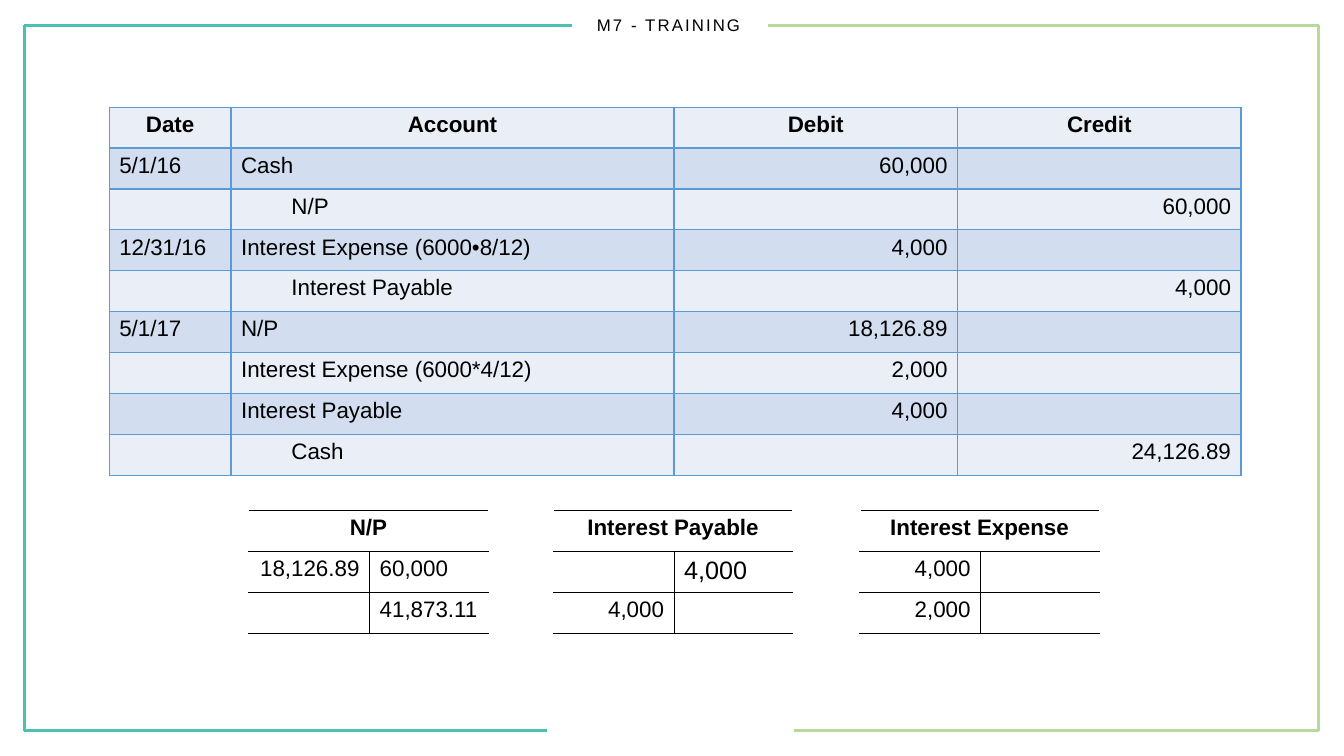
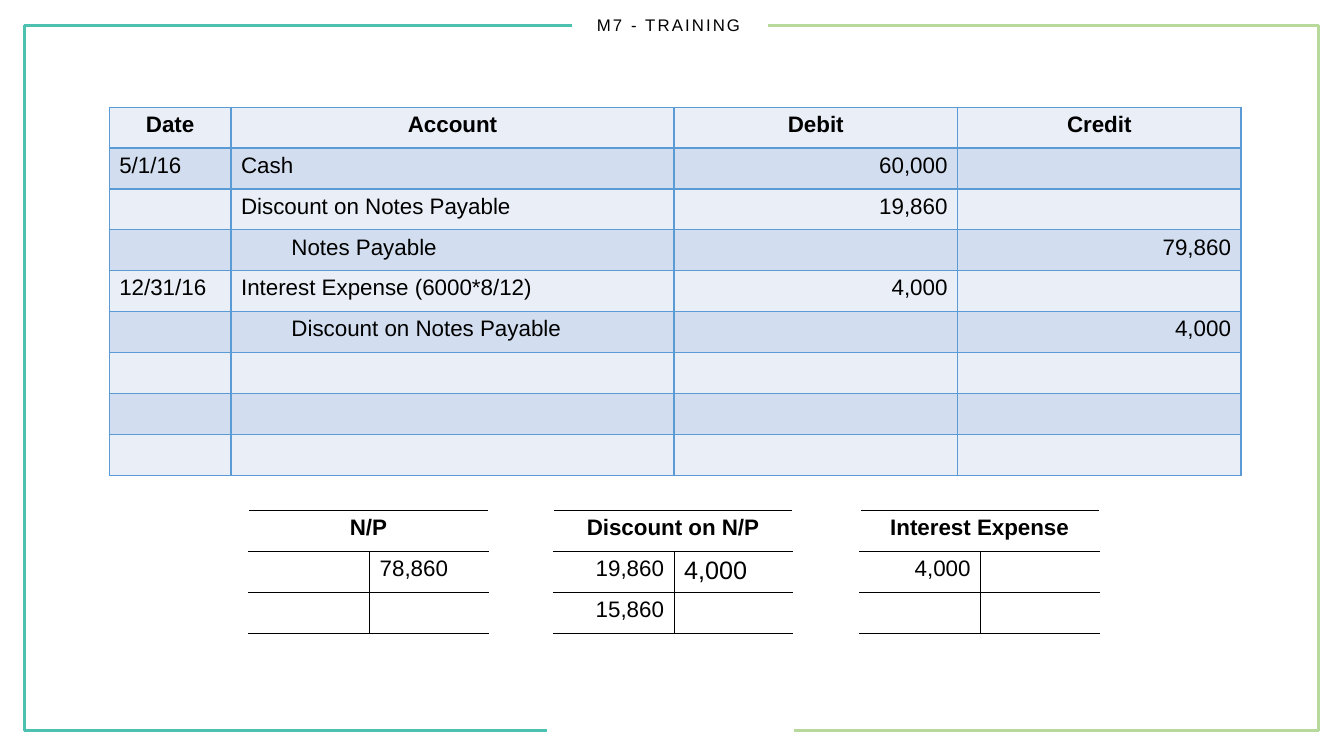
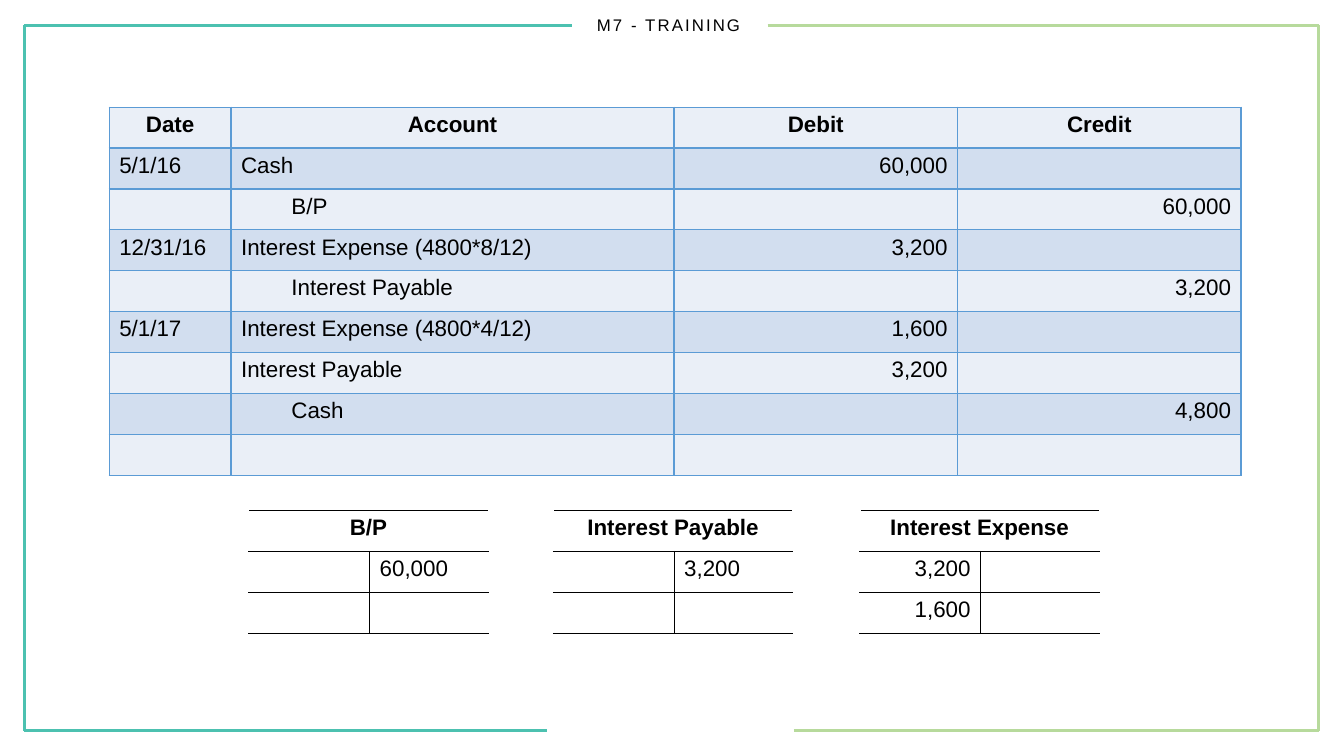
from lxml.etree import SubElement
from pptx import Presentation
from pptx.dml.color import RGBColor
from pptx.enum.shapes import MSO_CONNECTOR
from pptx.enum.text import MSO_ANCHOR, PP_ALIGN
from pptx.oxml.ns import qn
from pptx.util import Pt

PX = 9525  # 96 px to the inch
WIDTH, HEIGHT = 1280, 720
FONT = "Arial"
BLACK = "000000"
TEAL, GREEN = "4CC1B0", "B7DA9C"
BLUE = "5B9BD5"
BANDS = ["EAEFF7", "D2DEEF"]
LEFT, CENTER, RIGHT = PP_ALIGN.LEFT, PP_ALIGN.CENTER, PP_ALIGN.RIGHT

ROW_HEIGHT = 39
JOURNAL_COLUMNS = [116, 422, 270, 270]
JOURNAL_ROWS = 9
JOURNAL_HEADER = ("Date", "Account", "Debit", "Credit")
JOURNAL_ALIGNS = [LEFT, LEFT, RIGHT, RIGHT]
CREDIT_INDENT = 48
ACCOUNT_COLUMNS = [115, 113]
ACCOUNT_LEFTS = [237, 527, 819]

# Frame lines: x and y of both ends, colour
FRAME = [
    (23, 24, 23, 696, TEAL),
    (1256, 24, 1256, 696, GREEN),
    (23, 696, 521, 696, TEAL),
    (756, 696, 1256, 696, GREEN),
    (23, 24, 545, 24, TEAL),
    (731, 24, 1256, 24, GREEN),
]

# Each slide: journal rows, then T-accounts (title, size of credit figures, rows)
SLIDES = [
    (
        [
            ("5/1/16", "Cash", "60,000", ""),
            ("", "N/P", "", "60,000"),
            ("12/31/16", "Interest Expense (6000•8/12)", "4,000", ""),
            ("", "Interest Payable", "", "4,000"),
            ("5/1/17", "N/P", "18,126.89", ""),
            ("", "Interest Expense (6000*4/12)", "2,000", ""),
            ("", "Interest Payable", "4,000", ""),
            ("", "Cash", "", "24,126.89"),
        ],
        [
            ("N/P", 16, [("18,126.89", "60,000"), ("", "41,873.11")]),
            ("Interest Payable", 18, [("", "4,000"), ("4,000", "")]),
            ("Interest Expense", 16, [("4,000", ""), ("2,000", "")]),
        ],
    ),
    (
        [
            ("5/1/16", "Cash", "60,000", ""),
            ("", "Discount on Notes Payable", "19,860", ""),
            ("", "Notes Payable", "", "79,860"),
            ("12/31/16", "Interest Expense (6000*8/12)", "4,000", ""),
            ("", "Discount on Notes Payable", "", "4,000"),
        ],
        [
            ("N/P", 16, [("", "78,860"), ("", "")]),
            ("Discount on N/P", 18, [("19,860", "4,000"), ("15,860", "")]),
            ("Interest Expense", 16, [("4,000", ""), ("", "")]),
        ],
    ),
    (
        [
            ("5/1/16", "Cash", "60,000", ""),
            ("", "B/P", "", "60,000"),
            ("12/31/16", "Interest Expense (4800*8/12)", "3,200", ""),
            ("", "Interest Payable", "", "3,200"),
            ("5/1/17", "Interest Expense (4800*4/12)", "1,600", ""),
            ("", "Interest Payable", "3,200", ""),
            ("", "Cash", "", "4,800"),
        ],
        [
            ("B/P", 16, [("", "60,000"), ("", "")]),
            ("Interest Payable", 16, [("", "3,200"), ("", "")]),
            ("Interest Expense", 16, [("3,200", ""), ("1,600", "")]),
        ],
    ),
]


def color(value):
    return RGBColor.from_string(value)


def format_cell(cell, text, align, borders, line_color, fill=None, bold=False, size=16):
    """Draw borders, given as {side: points}, then the fill and the text."""
    properties = cell._tc.get_or_add_tcPr()
    for side in "LRTB":
        if side in borders:
            line = SubElement(properties, qn(f"a:ln{side}"), w=str(Pt(borders[side])))
            solid = SubElement(line, qn("a:solidFill"))
            SubElement(solid, qn("a:srgbClr"), val=line_color)
    if fill:
        cell.fill.solid()
        cell.fill.fore_color.rgb = color(fill)
    else:
        cell.fill.background()
    paragraph = cell.text_frame.paragraphs[0]
    paragraph.alignment = align
    if text:
        run = paragraph.add_run()
        run.text = text
        run.font.name, run.font.size, run.font.bold = FONT, Pt(size), bold
        run.font.color.rgb = color(BLACK)


presentation = Presentation()
presentation.slide_width, presentation.slide_height = WIDTH * PX, HEIGHT * PX
blank = presentation.slide_layouts[6]
for placeholder in list(blank.placeholders):
    blank.shapes.element.remove(placeholder.element)
slides = [presentation.slides.add_slide(blank) for _ in SLIDES]

# Frame and heading are drawn once, then moved to the shared layout
shapes = slides[0].shapes
for x1, y1, x2, y2, line_color in FRAME:
    line = shapes.add_connector(MSO_CONNECTOR.STRAIGHT, x1 * PX, y1 * PX, x2 * PX, y2 * PX)
    line.line.color.rgb = color(line_color)
    line.line.width = Pt(2.25)
    SubElement(line._element.spPr, qn("a:effectLst"))
heading = shapes.add_textbox(0, 0, WIDTH * PX, 48 * PX)
heading.text_frame.word_wrap = True
heading.text_frame.vertical_anchor = MSO_ANCHOR.MIDDLE
paragraph = heading.text_frame.paragraphs[0]
paragraph.alignment = CENTER
run = paragraph.add_run()
run.text = "M7 - TRAINING "
run.font.name, run.font.size = FONT, Pt(12)
run.font.color.rgb = color(BLACK)
run._r.get_or_add_rPr().set("spc", "150")
for shape in list(shapes):
    blank.shapes.element.append(shape.element)

for slide, (entries, accounts) in zip(slides, SLIDES):
    journal = slide.shapes.add_table(
        JOURNAL_ROWS, len(JOURNAL_COLUMNS), 104 * PX, 102 * PX,
        sum(JOURNAL_COLUMNS) * PX, JOURNAL_ROWS * ROW_HEIGHT * PX).table
    journal.first_row = journal.horz_banding = False
    for column, width in zip(journal.columns, JOURNAL_COLUMNS):
        column.width = width * PX
    empty_rows = [("",) * 4] * (JOURNAL_ROWS - 1 - len(entries))
    for i, values in enumerate([JOURNAL_HEADER] + entries + empty_rows):
        is_header = i == 0
        for j, text in enumerate(values):
            format_cell(journal.cell(i, j), text, CENTER if is_header else JOURNAL_ALIGNS[j],
                        dict.fromkeys("LRTB", 1), BLUE, BANDS[i % 2], is_header)
        if values[3] and not is_header:
            paragraph = journal.cell(i, 1).text_frame.paragraphs[0]
            paragraph._p.get_or_add_pPr().set("marL", str(CREDIT_INDENT * PX))

    for left, (title, credit_size, rows) in zip(ACCOUNT_LEFTS, accounts):
        account = slide.shapes.add_table(
            3, 2, left * PX, 486 * PX, sum(ACCOUNT_COLUMNS) * PX, 3 * ROW_HEIGHT * PX).table
        account.first_row = account.horz_banding = False
        for column, width in zip(account.columns, ACCOUNT_COLUMNS):
            column.width = width * PX
        account.cell(0, 0).merge(account.cell(0, 1))
        for j, text in enumerate((title, "")):
            format_cell(account.cell(0, j), text, CENTER, {"T": 1, "B": 0.5}, BLACK, bold=True)
        for i, (debit, credit) in enumerate(rows, 1):
            format_cell(account.cell(i, 0), debit, RIGHT, dict.fromkeys("RTB", 0.5), BLACK)
            format_cell(account.cell(i, 1), credit, LEFT, dict.fromkeys("LTB", 0.5), BLACK,
                        size=credit_size)

presentation.save("out.pptx")
